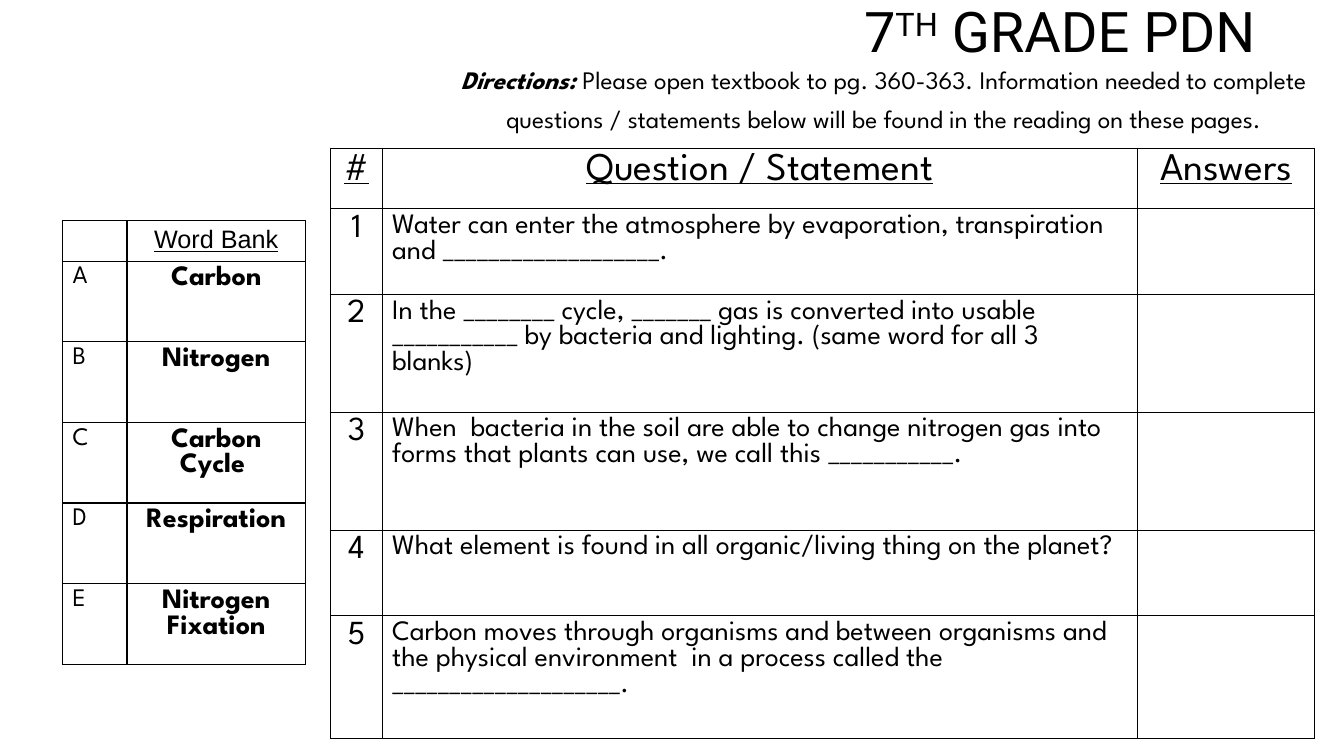
from lxml.etree import SubElement
from pptx import Presentation
from pptx.dml.color import RGBColor
from pptx.enum.text import MSO_ANCHOR, MSO_AUTO_SIZE, PP_ALIGN
from pptx.oxml.ns import qn
from pptx.util import Emu, Pt

PX = 9144  # 100 px to the inch
COLORS = {"ink": "000000", "paper": "FFFFFF"}
SPARTAN = "League Spartan"

HEADING = {"size": 28, "underline": True, "align": PP_ALIGN.CENTER}
NUMBER = {"size": 24, "align": PP_ALIGN.CENTER}
STATEMENT = {"size": 20}
BANK_HEADING = {"name": "Arial", "size": 18, "underline": True, "align": PP_ALIGN.CENTER}
LETTER = {"size": 18}
WORD = {"size": 20, "bold": True, "align": PP_ALIGN.CENTER}

WORDS = ["Carbon", "Nitrogen", "Carbon Cycle ", "Respiration", "Nitrogen Fixation"]
STATEMENTS = [
    "Water can enter the atmosphere by evaporation, transpiration and ___________________.",
    "In the ________ cycle, _______ gas is converted into usable ___________ by bacteria "
    "and lighting. (same word for all 3 blanks)",
    "When  bacteria in the soil are able to change nitrogen gas into forms that plants "
    "can use, we call this ___________.",
    "What element is found in all organic/living thing on the planet?",
    "Carbon moves through organisms and between organisms and the physical environment  "
    "in a process called the ____________________.",
]


def px(*lengths):
    return [Emu(length * PX) for length in lengths]


def color(name):
    return RGBColor.from_string(COLORS[name])


def add_run(paragraph, text, **formats):
    run = paragraph.add_run()
    run.text = text
    values = {"name": SPARTAN, **formats}
    values["size"] = Pt(values["size"])
    for attribute, value in values.items():
        setattr(run.font, attribute, value)
    run.font.color.rgb = color("ink")
    return run


def add_title(slide):
    title = slide.shapes.title
    title.left, title.top, title.width, title.height = px(313, -16, 942, 101)
    frame = title.text_frame
    frame.auto_size = MSO_AUTO_SIZE.NONE
    frame.vertical_anchor = MSO_ANCHOR.MIDDLE
    paragraph = frame.paragraphs[0]
    paragraph.alignment = PP_ALIGN.RIGHT
    paragraph.line_spacing = 0.9
    for text, baseline in [("7", 0), ("TH", 30000), (" GRADE PDN", 0)]:
        run = add_run(paragraph, text, name="Roboto", size=40)
        if baseline:
            run.font._element.set("baseline", str(baseline))


def add_directions(slide):
    frame = slide.shapes.add_textbox(*px(420, 50, 913, 101)).text_frame
    frame.word_wrap = True
    paragraph = frame.paragraphs[0]
    paragraph.alignment = PP_ALIGN.CENTER
    paragraph.line_spacing = 1.3
    add_run(paragraph, "Directions: ", size=18, bold=True, italic=True)
    add_run(paragraph, "Please open textbook to pg. 360-363. Information needed to complete "
            "questions / statements below will be found in the reading on these pages.", size=18)


def add_borders(cell):
    properties = cell._tc.get_or_add_tcPr()
    for side in ("lnL", "lnR", "lnT", "lnB"):
        line = SubElement(properties, qn(f"a:{side}"), w=str(Pt(1)))
        fill = SubElement(line, qn("a:solidFill"))
        SubElement(fill, qn("a:srgbClr"), val=COLORS["ink"])


def add_grid(slide, left, top, widths, heights, rows):
    """Add a ruled table; each cell is a (text, format) pair or None."""
    table = slide.shapes.add_table(
        len(heights), len(widths), *px(left, top, sum(widths), sum(heights))).table
    table.first_row = table.horz_banding = False
    for column, width in zip(table.columns, px(*widths)):
        column.width = width
    for row, height, contents in zip(table.rows, px(*heights), rows):
        row.height = height
        for cell, content in zip(row.cells, contents):
            add_borders(cell)
            cell.fill.solid()
            cell.fill.fore_color.rgb = color("paper")
            if content:
                text, formats = content
                formats = dict(formats)
                paragraph = cell.text_frame.paragraphs[0]
                paragraph.alignment = formats.pop("align", PP_ALIGN.LEFT)
                add_run(paragraph, text, **formats)


def main():
    presentation = Presentation()
    presentation.slide_width, presentation.slide_height = px(1333, 750)
    slide = presentation.slides.add_slide(presentation.slide_layouts[5])
    add_title(slide)
    add_directions(slide)

    bank = [(None, ("Word Bank", BANK_HEADING))]
    bank += [((letter, LETTER), (word, WORD)) for letter, word in zip("ABCDE", WORDS)]
    add_grid(slide, 62, 219, [64, 177], [39] + [80] * len(WORDS), bank)

    questions = [[(text, HEADING) for text in ("#", "Question / Statement", "Answers")]]
    questions += [((str(number), NUMBER), (statement, STATEMENT), None)
                  for number, statement in enumerate(STATEMENTS, 1)]
    add_grid(slide, 328, 147, [51, 749, 176], [60, 85, 117, 117, 85, 122], questions)

    presentation.save("out.pptx")


if __name__ == "__main__":
    main()
